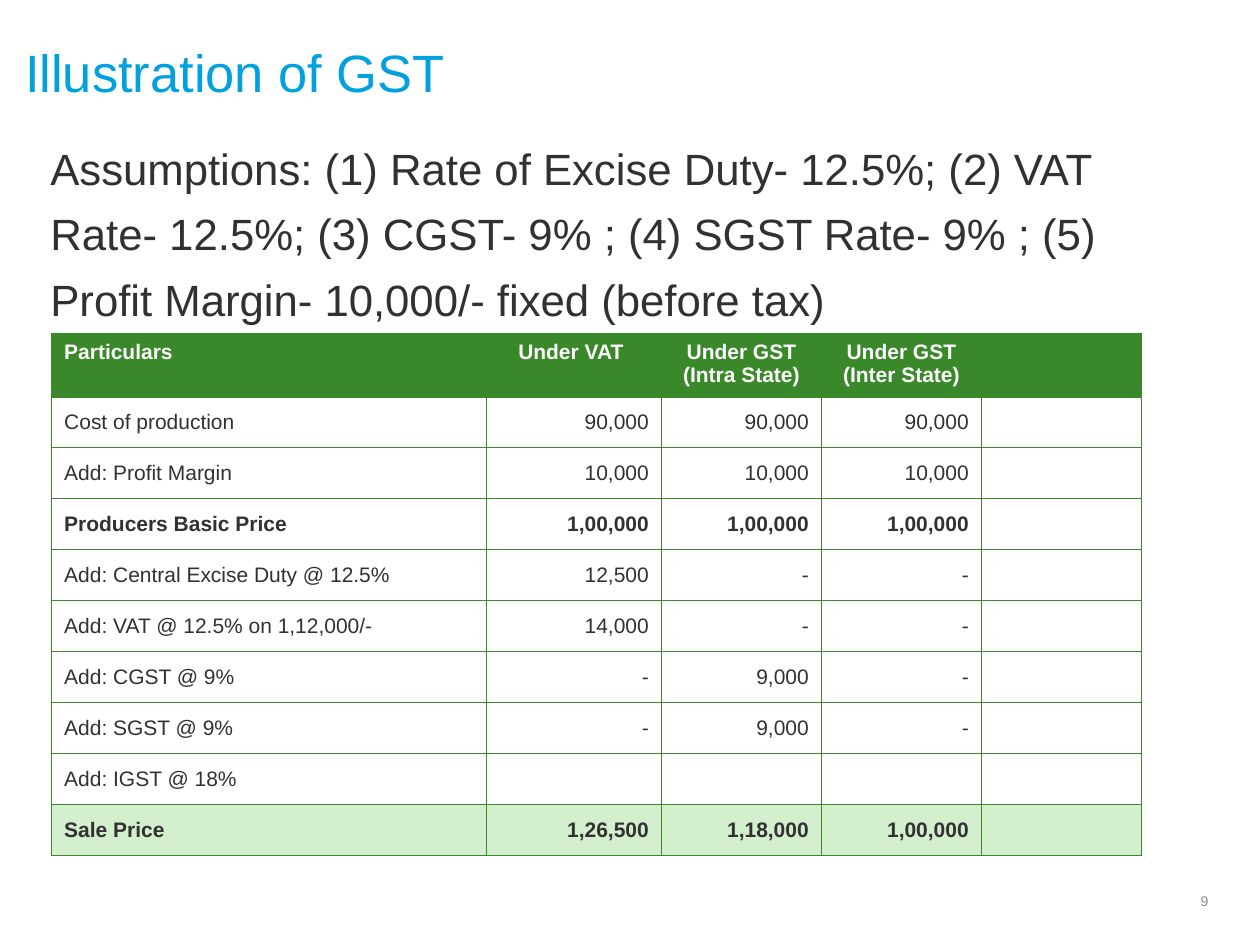
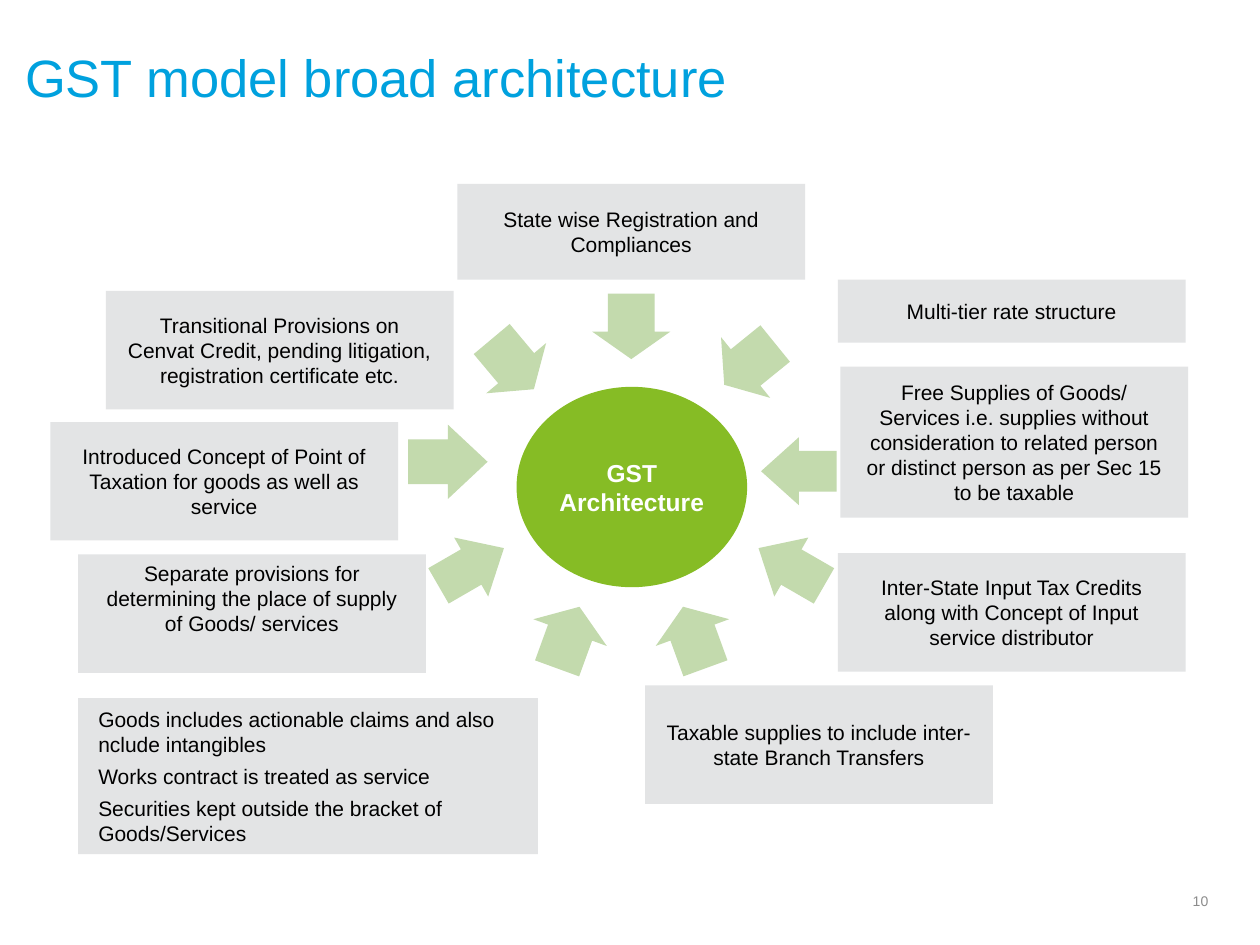
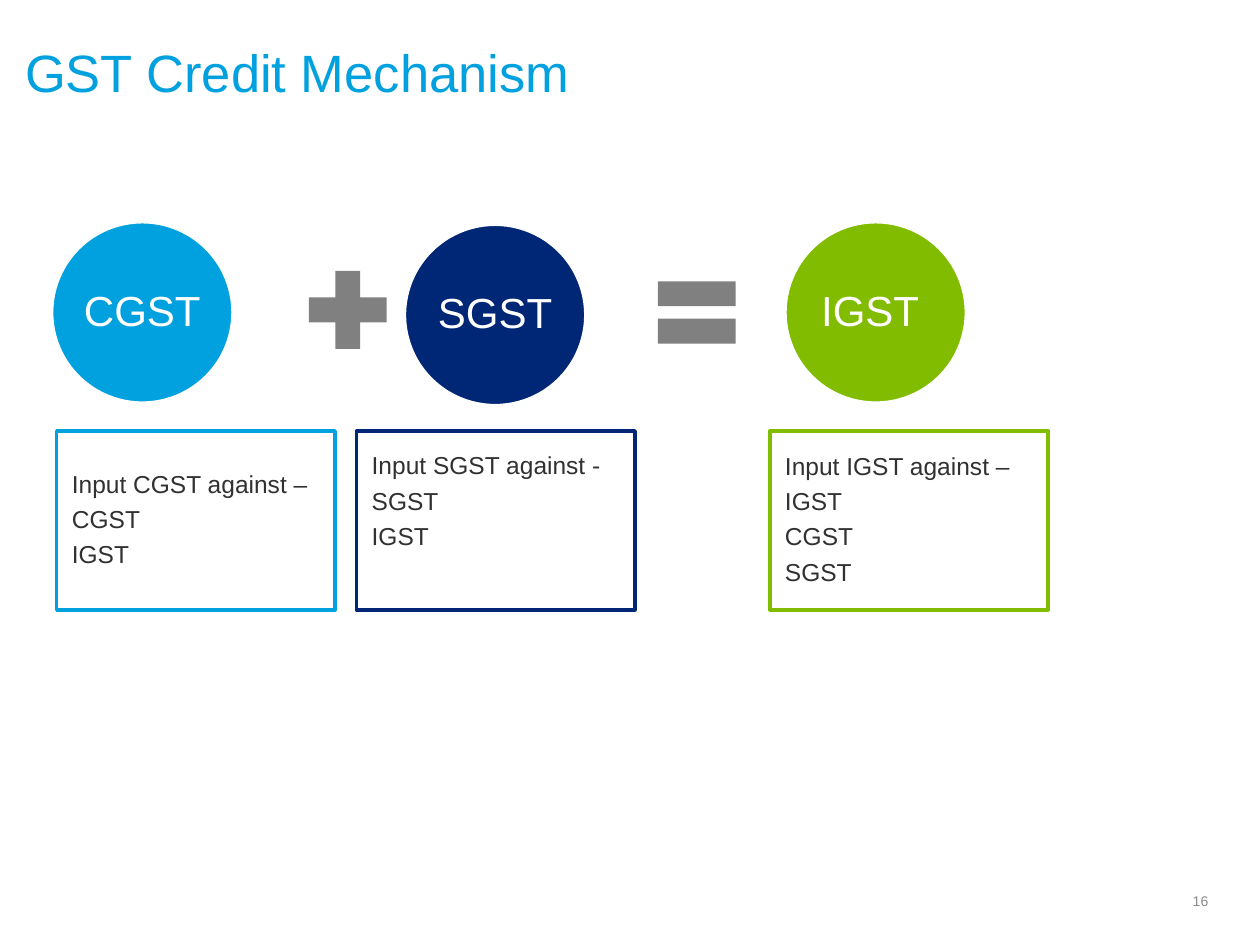
from dataclasses import dataclass

from lxml import etree
from pptx import Presentation
from pptx.dml.color import RGBColor
from pptx.enum import shapes, text
from pptx.oxml import ns
from pptx import util as u

PX = u.Inches(1) // 100  # 100 px to the inch
LEFT, CENTER, RIGHT = text.PP_ALIGN.LEFT, text.PP_ALIGN.CENTER, text.PP_ALIGN.RIGHT
TOP, MIDDLE = text.MSO_ANCHOR.TOP, text.MSO_ANCHOR.MIDDLE
SHAPE = shapes.MSO_SHAPE


@dataclass(frozen=True)
class Theme:
    font: str = "Arial"
    # Colours
    blue: str = "00A1DE"
    navy: str = "002776"
    lime: str = "81BC00"
    hub: str = "86BC25"
    arrow: str = "C3DAAD"
    panel: str = "E3E4E5"
    table: str = "39892B"
    total: str = "D3EFCE"
    sign: str = "808080"
    ink: str = "313131"
    black: str = "000000"
    white: str = "FFFFFF"
    footer: str = "8C8C8C"
    # Type sizes
    title_size: int = 30
    body_size: int = 25
    circle_size: int = 24
    box_size: int = 14
    small_size: int = 12
    footer_size: int = 8


class Deck:
    def __init__(self, theme):
        self.theme = theme
        self.presentation = Presentation()
        self.presentation.slide_width = 1000 * PX
        self.presentation.slide_height = 750 * PX
        self.slide = None

    def new_slide(self, title, number, title_top=32):
        layout = self.presentation.slide_layouts[6]
        self.slide = self.presentation.slides.add_slide(layout)
        theme = self.theme
        self.label((0, title_top, 917, 61), title, theme.title_size, theme.blue, margin=20)
        self.label((872, 701, 87, 28), str(number), theme.footer_size, theme.footer,
                   align=RIGHT, anchor=MIDDLE)

    def set_text(self, frame, content, size, color, bold=False, align=LEFT, spacing=None,
                 after=0):
        frame.word_wrap = True
        frame.text = content
        for paragraph in frame.paragraphs:
            paragraph.alignment = align
            paragraph.space_after = u.Pt(after)
            if spacing:
                paragraph.line_spacing = spacing
            for run in paragraph.runs:
                run.font.name = self.theme.font
                run.font.size = u.Pt(size)
                run.font.bold = bold
                run.font.color.rgb = RGBColor.from_string(color)

    def inset(self, frame, side, top=0, anchor=MIDDLE):
        frame.margin_left = frame.margin_right = side * PX
        frame.margin_top, frame.margin_bottom = top * PX, 0
        frame.vertical_anchor = anchor

    def label(self, box, content, size, color, margin=0, anchor=TOP, **style):
        frame = self.slide.shapes.add_textbox(*(n * PX for n in box)).text_frame
        self.inset(frame, 0, anchor=anchor)
        frame.margin_left = margin * PX
        self.set_text(frame, content, size, color, **style)
        return frame

    def shape(self, kind, box, fill, line=None):
        shape = self.slide.shapes.add_shape(kind, *(n * PX for n in box))
        shape.shadow.inherit = False
        shape.fill.solid()
        shape.fill.fore_color.rgb = RGBColor.from_string(fill)
        if line:
            shape.line.color.rgb = RGBColor.from_string(line)
            shape.line.width = u.Pt(2)
        else:
            shape.line.fill.background()
        return shape

    def panel(self, box, content, align=CENTER, anchor=MIDDLE, top=0):
        shape = self.shape(SHAPE.RECTANGLE, box, self.theme.panel)
        self.inset(shape.text_frame, 16, top, anchor)
        self.set_text(shape.text_frame, content, self.theme.small_size, self.theme.black,
                      align=align, after=4)

    def outlined_box(self, box, content, line, anchor=MIDDLE, top=0):
        shape = self.shape(SHAPE.RECTANGLE, box, self.theme.white, line)
        self.inset(shape.text_frame, 12, top, anchor)
        self.set_text(shape.text_frame, content, self.theme.box_size, self.theme.ink,
                      spacing=0.9, after=5)

    def oval(self, box, content, fill, size, line=None, **style):
        shape = self.shape(SHAPE.OVAL, box, fill, line)
        self.inset(shape.text_frame, 0)
        self.set_text(shape.text_frame, content, size, self.theme.white, align=CENTER, **style)

    def arrow(self, box, angle):
        shape = self.shape(SHAPE.RIGHT_ARROW, box, self.theme.arrow)
        shape.adjustments[0] = 0.6
        shape.adjustments[1] = box[2] / box[3] / 2  # head takes half the length
        shape.rotation = angle

    def cell_borders(self, cell):
        properties = cell._tc.get_or_add_tcPr()
        for side in ("a:lnL", "a:lnR", "a:lnT", "a:lnB"):
            line = etree.SubElement(properties, ns.qn(side), w=str(u.Pt(0.75)))
            fill = etree.SubElement(line, ns.qn("a:solidFill"))
            etree.SubElement(fill, ns.qn("a:srgbClr"), val=self.theme.table)

    def table(self, box, widths, header_height, rows, bold_rows):
        theme = self.theme
        table = self.slide.shapes.add_table(
            len(rows), len(widths), *(n * PX for n in box)).table
        table.first_row = table.horz_banding = False
        for column, width in zip(table.columns, widths):
            column.width = width * PX
        last = len(rows) - 1
        for i, values in enumerate(rows):
            height = header_height if i == 0 else (box[3] - header_height) / last
            table.rows[i].height = int(height * PX)
            fill = {0: theme.table, last: theme.total}.get(i)
            for j, value in enumerate(values):
                cell = table.cell(i, j)
                self.cell_borders(cell)
                if fill:
                    cell.fill.solid()
                    cell.fill.fore_color.rgb = RGBColor.from_string(fill)
                else:
                    cell.fill.background()
                cell.vertical_anchor = MIDDLE if i else TOP
                align = LEFT if j == 0 else RIGHT if i else CENTER
                self.set_text(cell.text_frame, value, theme.small_size,
                              theme.ink if i else theme.white, i in bold_rows, align)


def illustration(deck):
    theme = deck.theme
    deck.new_slide("Illustration of GST", 9)
    assumptions = deck.label(
        (20, 102, 917, 160),
        "Assumptions: (1) Rate of Excise Duty- 12.5%; (2) VAT Rate- 12.5%; (3) CGST- 9% ; "
        "(4) SGST Rate- 9% ; (5) Profit Margin- 10,000/- fixed (before tax)",
        theme.body_size, theme.ink, margin=20, spacing=1.25)
    assumptions.paragraphs[0].space_before = u.Pt(12)
    rows = [
        ("Particulars", "Under VAT ", "Under GST (Intra State)", "Under GST (Inter State)", ""),
        ("Cost of production", "90,000", "90,000", "90,000", ""),
        ("Add: Profit Margin", "10,000", "10,000", "10,000", ""),
        ("Producers Basic Price", "1,00,000", "1,00,000", "1,00,000", ""),
        ("Add: Central Excise Duty @ 12.5%", "12,500", "-", "-", ""),
        ("Add: VAT @ 12.5% on 1,12,000/-", "14,000", "-", "-", ""),
        ("Add: CGST @ 9%", "-", "9,000", "-", ""),
        ("Add: SGST @ 9%", "-", "9,000", "-", ""),
        ("Add: IGST @ 18%", "", "", "", ""),
        ("Sale Price", "1,26,500", "1,18,000", "1,00,000", ""),
    ]
    deck.table((41, 265, 865, 412), (345, 139, 127, 127, 127), 48, rows, bold_rows=(0, 3, 9))


def architecture(deck):
    deck.new_slide("GST model broad architecture", 10, title_top=36)

    # Features around the hub
    for box, content in (
        ((363, 146, 276, 76), "State wise Registration and Compliances"),
        ((665, 439, 276, 94), "Inter-State Input Tax Credits along with Concept of Input "
                              "service distributor"),
        ((512, 544, 276, 94), "Taxable supplies to include inter-state Branch Transfers"),
        ((40, 335, 276, 94), "Introduced Concept of Point of Taxation for goods as well "
                             "as service"),
        ((84, 231, 276, 94), "Transitional Provisions on Cenvat Credit, pending litigation, "
                             "registration certificate etc."),
        ((665, 222, 276, 50), "Multi-tier rate structure"),
        ((667, 291, 276, 120), "Free Supplies of Goods/ Services i.e. supplies without "
                               "consideration to related person or distinct person as per "
                               "Sec 15 to be taxable"),
    ):
        deck.panel(box, content)
    deck.panel((62, 440, 276, 94), "Separate provisions for determining the place of supply "
               "of Goods/ services", anchor=TOP, top=5)
    deck.panel((62, 554, 365, 124),
               "Goods includes actionable claims and also nclude intangibles\n"
               "Works contract is treated as service\n"
               "Securities kept outside the bracket of Goods/Services", align=LEFT)

    # Hub and the arrows that point to it
    deck.oval((410, 307, 183, 159), "GST Architecture", deck.theme.hub,
              deck.theme.box_size, bold=True)
    for box, angle in (
        ((475, 228, 52, 62), 90),
        ((569, 258, 52, 62), 141),
        ((604, 347, 60, 54), 180),
        ((598, 423, 60, 54), 210),
        ((525, 475, 52, 62), 250),
        ((425, 475, 52, 62), 290),
        ((344, 423, 60, 54), 330),
        ((324, 337, 63, 59), 0),
        ((381, 258, 52, 62), 50),
    ):
        deck.arrow(box, angle)


def credit_mechanism(deck):
    theme = deck.theme
    deck.new_slide("GST Credit Mechanism", 16)

    # Credit rules
    deck.outlined_box((45, 342, 221, 142), "Input CGST against –\nCGST\nIGST", theme.blue)
    deck.outlined_box((283, 342, 221, 142), "Input SGST against -\nSGST\nIGST", theme.navy,
                      anchor=TOP, top=18)
    deck.outlined_box((611, 342, 221, 142), "Input IGST against –\nIGST\nCGST\nSGST", theme.lime)

    # Equation
    for left, top, tax, color in ((41, 176, "CGST", theme.blue), (321, 178, "SGST", theme.navy),
                                  (623, 176, "IGST ", theme.lime)):
        deck.oval((left, top, 144, 144), tax, color, theme.circle_size, theme.white, spacing=0.9)
    deck.shape(SHAPE.MATH_PLUS, (234, 204, 84, 84), theme.sign)
    deck.shape(SHAPE.MATH_EQUAL, (511, 206, 84, 84), theme.sign)


def main():
    deck = Deck(Theme())
    illustration(deck)
    architecture(deck)
    credit_mechanism(deck)
    deck.presentation.save("out.pptx")


if __name__ == "__main__":
    main()
